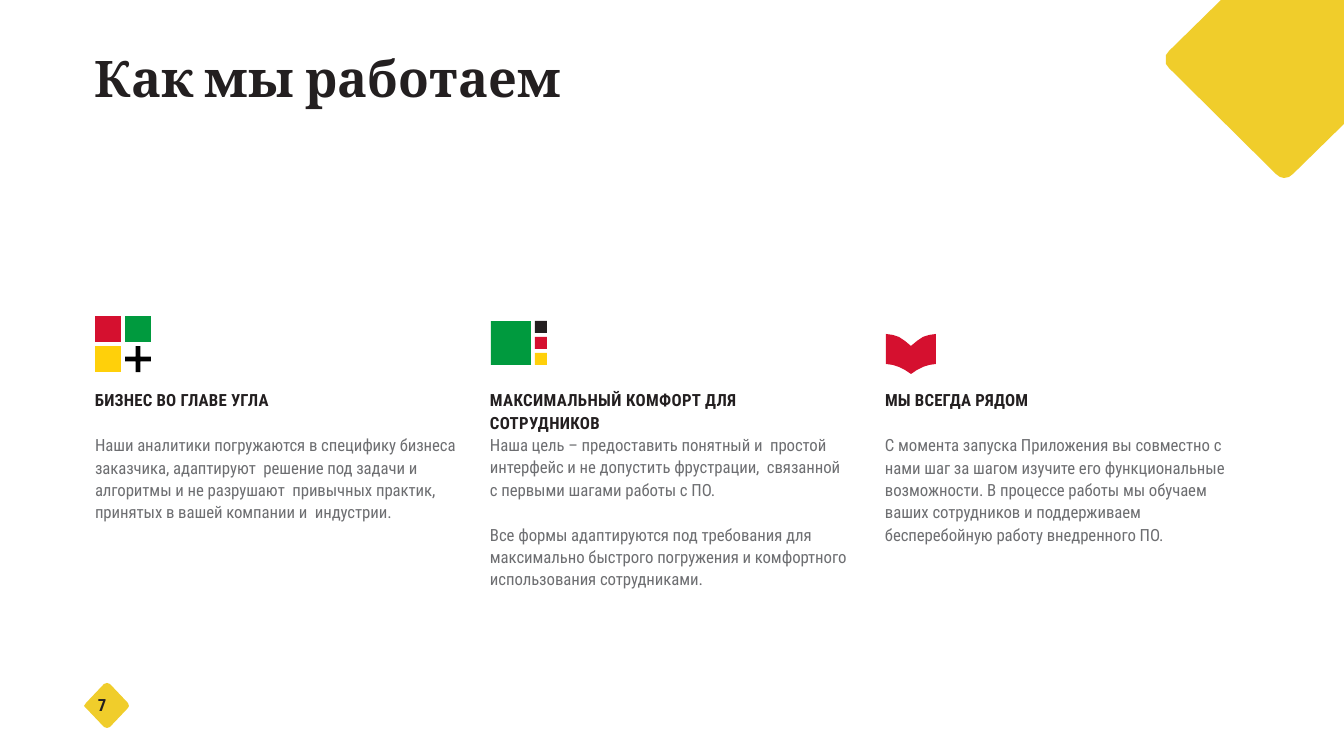
from pptx import Presentation
from pptx import util as u
from pptx.dml.color import RGBColor
from pptx.enum import shapes, text

PX = 914400 / 100.8
INK = RGBColor(0x23, 0x1F, 0x20)
GREY = RGBColor(0x6D, 0x6E, 0x71)
GOLD = RGBColor(0xF0, 0xCD, 0x2B)
YELLOW = RGBColor(0xFF, 0xD0, 0x0A)
RED = RGBColor(0xD5, 0x10, 0x2F)
GREEN = RGBColor(0x00, 0x9A, 0x3E)
BLACK = RGBColor(0x00, 0x00, 0x00)
SERIF = "Cambria"
SANS = "Roboto Condensed"

CORNER = [(1344, 0), (1221, 0), (1169, 51), (1166, 55), (1166, 59), (1166, 64),
          (1169, 68), (1276, 174), (1280, 177), (1284, 178), (1289, 177),
          (1293, 174), (1344, 124)]
BADGE = [(104, 684), (107, 683), (110, 684), (128, 703), (129, 706), (128, 708),
         (110, 727), (107, 728), (104, 727), (86, 708), (84, 706), (86, 703)]
BOOK_AXIS = 911
BOOK_LEFT = [(911, 346), (905, 341), (899, 337), (893, 335), (886, 334),
             (886, 364), (893, 365), (899, 367), (905, 370), (911, 374)]

BUSINESS = ("Наши аналитики погружаются в специфику бизнеса заказчика, "
            "адаптируют  решение под задачи и алгоритмы и не разрушают  "
            "привычных практик, принятых в вашей компании и  индустрии.")
COMFORT = ("Наша цель – предоставить понятный и  простой интерфейс и не "
           "допустить фрустрации,  связанной с первыми шагами работы с ПО.")
FORMS = ("Все формы адаптируются под требования для максимально быстрого "
         "погружения и комфортного использования сотрудниками.")
SUPPORT = ("С момента запуска Приложения вы совместно с нами шаг за шагом "
           "изучите его функциональные возможности. В процессе работы мы "
           "обучаем ваших сотрудников и поддерживаем бесперебойную работу "
           "внедренного ПО.")


def px(length):
    return u.Emu(round(length * PX))


def paint(shape, color):
    shape.shadow.inherit = False
    shape.fill.solid()
    shape.fill.fore_color.rgb = color
    shape.line.fill.background()


def add_outline(slide, points, color):
    builder = slide.shapes.build_freeform(*points[0], scale=PX)
    builder.add_line_segments(points[1:], close=True)
    paint(builder.convert_to_shape(), color)


def add_block(slide, left, top, width, height, color,
              kind=shapes.MSO_SHAPE.RECTANGLE):
    shape = slide.shapes.add_shape(kind, px(left), px(top), px(width), px(height))
    paint(shape, color)
    return shape


def add_text_frame(slide, left, top, width, height):
    frame = slide.shapes.add_textbox(px(left), px(top), px(width), px(height)).text_frame
    frame.word_wrap = True
    frame.auto_size = text.MSO_AUTO_SIZE.NONE
    frame.vertical_anchor = text.MSO_ANCHOR.TOP
    frame.margin_left = frame.margin_right = frame.margin_top = frame.margin_bottom = 0
    return frame


def add_run(paragraph, words, color=INK, bold=True, size=12, font=SANS, spacing=0):
    run = paragraph.add_run()
    run.text = words
    run.font.name = font
    run.font.size = u.Pt(size)
    run.font.bold = bold
    run.font.color.rgb = color
    if spacing:
        run._r.get_or_add_rPr().set("spc", str(spacing))


def add_heading(paragraph, words, spacing):
    add_run(paragraph, words, spacing=spacing)


def add_body(paragraph, words):
    paragraph.line_spacing = 1.11
    add_run(paragraph, words, color=GREY, bold=False, spacing=-5)


def add_column(slide, left, heading, heading_width, spacing, body, body_width, body_height):
    heading_frame = add_text_frame(slide, left, 390, heading_width, 39)
    add_heading(heading_frame.paragraphs[0], heading, spacing)
    body_frame = add_text_frame(slide, left, 433, body_width, body_height)
    add_body(body_frame.paragraphs[0], body)


def add_comfort_column(slide):
    frame = add_text_frame(slide, 490, 388, 358, 223)
    heading = frame.paragraphs[0]
    heading.line_spacing = 1.11
    add_heading(heading, "МАКСИМАЛЬНЫЙ КОМФОРТ ДЛЯ СОТРУДНИКОВ", 25)
    add_body(frame.add_paragraph(), COMFORT)
    forms = frame.add_paragraph()
    forms.space_before = u.Pt(16)
    add_body(forms, FORMS)


def add_grid_icon(slide):
    left, top, step, side = 95, 316, 30, 26
    for column, row, color in [(0, 0, RED), (1, 0, GREEN), (0, 1, YELLOW)]:
        add_block(slide, left + column * step, top + row * step, side, side, color)
    plus = add_block(slide, left + step, top + step, side, side, BLACK,
                     shapes.MSO_SHAPE.CROSS)
    plus.adjustments[0] = 0.41


def add_panel_icon(slide):
    add_block(slide, 491, 321, 40, 44, GREEN)
    for row, color in enumerate([INK, RED, YELLOW]):
        add_block(slide, 535, 321 + row * 16, 12, 12, color)


def add_book_icon(slide):
    right = [(2 * BOOK_AXIS - x, y) for x, y in reversed(BOOK_LEFT[1:-1])]
    add_outline(slide, BOOK_LEFT + right, RED)


def main():
    presentation = Presentation()
    presentation.slide_width = px(1344)
    presentation.slide_height = px(756)
    slide = presentation.slides.add_slide(presentation.slide_layouts[6])

    add_outline(slide, BADGE, GOLD)
    title = add_text_frame(slide, 95, 47, 541, 126)
    add_run(title.paragraphs[0], "Как мы работаем", size=36, font=SERIF)
    add_outline(slide, CORNER, GOLD)

    add_column(slide, 95, "БИЗНЕС ВО ГЛАВЕ УГЛА", 182, 15, BUSINESS, 366, 110)
    add_comfort_column(slide)
    add_column(slide, 885, "МЫ ВСЕГДА РЯДОМ", 151, 15, SUPPORT, 364, 132)

    add_book_icon(slide)
    add_grid_icon(slide)
    add_panel_icon(slide)

    number = add_text_frame(slide, 98, 695, 24, 22)
    add_run(number.paragraphs[0], "7")
    presentation.save("out.pptx")


if __name__ == "__main__":
    main()
